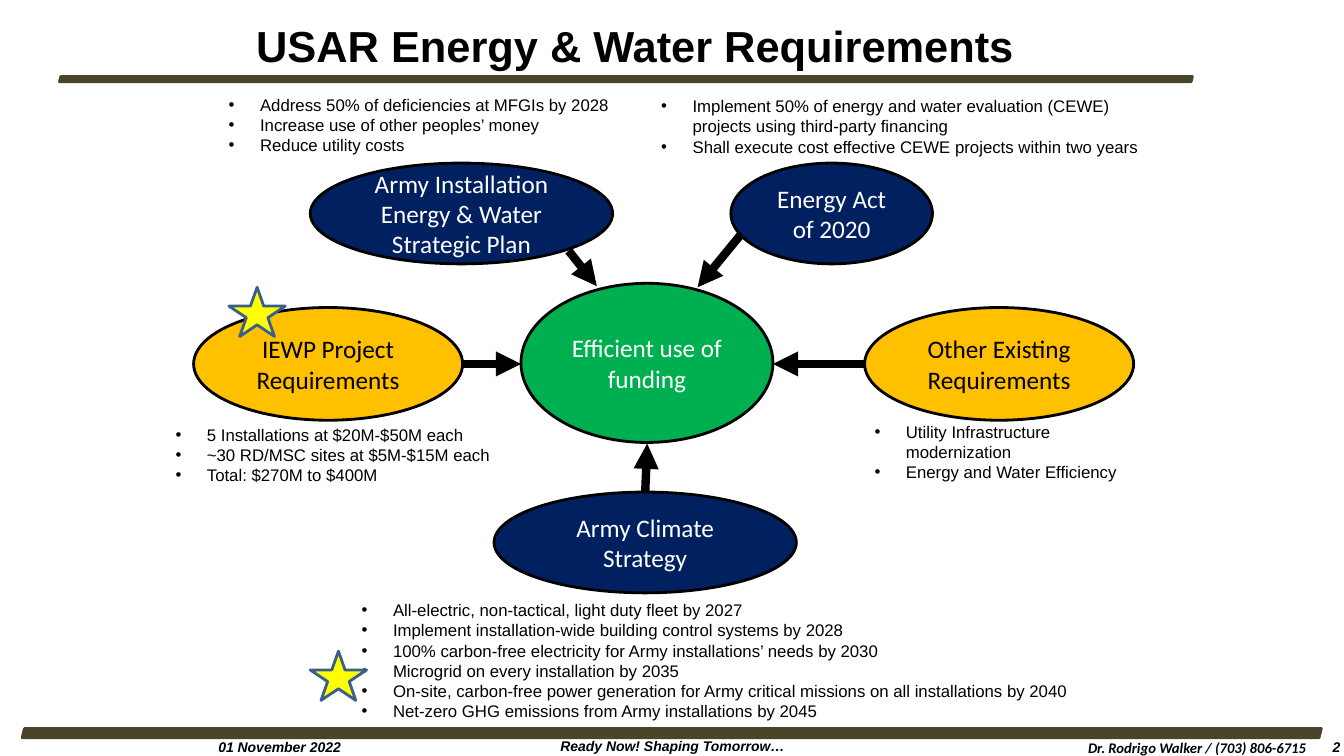
import dataclasses
import pptx
import pptx.util
import pptx.dml.color
import pptx.enum.shapes
import pptx.enum.text
import pptx.oxml
import pptx.oxml.ns

Cm = pptx.util.Cm
Pt = pptx.util.Pt
SHAPE = pptx.enum.shapes.MSO_SHAPE
ALIGN = pptx.enum.text.PP_ALIGN
ANCHOR = pptx.enum.text.MSO_ANCHOR


@dataclasses.dataclass(frozen=True)
class Theme:
    black: str = "000000"
    white: str = "FFFFFF"
    olive: str = "4A452A"
    navy: str = "002060"
    green: str = "00B050"
    gold: str = "FFC000"
    yellow: str = "FFFF00"
    blue: str = "3A5F8C"
    heading: str = "Arial"
    body: str = "Calibri"
    title_size: float = 31
    oval_size: float = 18
    list_size: float = 12
    contact_size: float = 10.5
    footer_size: float = 10
    outline: float = 2
    arrow: float = 6


theme = Theme()
rgb = pptx.dml.color.RGBColor.from_string


def add_figure(kind, box, fill, line):
    sp = s.shapes.add_shape(kind, *map(Cm, box))
    sp.shadow.inherit = False
    sp.fill.solid()
    sp.fill.fore_color.rgb = rgb(fill)
    sp.line.color.rgb = rgb(line)
    sp.line.width = Pt(theme.outline)
    return sp


def write(sp, lines, size, font, color=theme.black, align=ALIGN.CENTER,
          anchor=ANCHOR.TOP, wrap=True, bold=False, italic=False, bullet=False):
    tf = sp.text_frame
    tf.auto_size = pptx.enum.text.MSO_AUTO_SIZE.NONE
    tf.word_wrap = wrap
    tf.vertical_anchor = anchor
    for i, line in enumerate(lines):
        p = tf.add_paragraph() if i else tf.paragraphs[0]
        if bullet:
            pPr = p._p.get_or_add_pPr()
            pPr.set("marL", str(Cm(0.79)))
            pPr.set("indent", str(-Cm(0.79)))
            ns = pptx.oxml.ns.nsdecls("a")
            pPr.append(pptx.oxml.parse_xml(f'<a:buFont {ns} typeface="Arial"/>'))
            pPr.append(pptx.oxml.parse_xml(f'<a:buChar {ns} char="•"/>'))
        p.alignment = align
        p.space_before = Pt(0)
        r = p.add_run()
        r.text = line
        r.font.size = Pt(size)
        r.font.name = font
        r.font.bold = bold
        r.font.italic = italic
        r.font.color.rgb = rgb(color)


prs = pptx.Presentation()
prs.slide_width = Cm(33.87)
prs.slide_height = Cm(19.05)
s = prs.slides.add_slide(prs.slide_layouts[4])

for box in [(1.5, 1.93, 28.55, 0.13), (0.56, 18.36, 32.74, 0.23)]:
    add_figure(SHAPE.PARALLELOGRAM, box, theme.olive, theme.olive)

footers = [
    ("Ready Now! Shaping Tomorrow…", (13.82, 18.47, 6.25, 0.69),
     ALIGN.CENTER, False, theme.footer_size, theme.heading),
    ("2", (32.61, 18.49, 1.42, 0.71),
     ALIGN.RIGHT, True, theme.footer_size, theme.heading),
    ("01 November 2022", (5.23, 18.49, 3.63, 0.69),
     ALIGN.CENTER, False, theme.footer_size, theme.heading),
    ("Dr. Rodrigo Walker / (703) 806-6715", (21.03, 18.49, 12.14, 0.71),
     ALIGN.RIGHT, True, theme.contact_size, theme.body),
]
for text, box, align, wrap, size, font in footers:
    sp = s.shapes.add_textbox(*map(Cm, box))
    write(sp, [text], size, font, align=align, wrap=wrap, bold=True, italic=True)

title = s.shapes.title
title.left, title.top, title.width, title.height = map(Cm, (4.88, 0.3, 22.23, 1.68))
write(title, ["USAR Energy & Water Requirements"], theme.title_size,
      theme.heading, anchor=ANCHOR.MIDDLE, bold=True)

arrows = [
    (18.85, 5.69, 17.58, 7.24),
    (14.33, 6.32, 15.04, 7.21),
    (11.63, 9.17, 13.13, 9.17),
    (21.79, 9.17, 19.48, 9.17),
    (16.26, 12.4, 16.31, 11.18),
]
for ends in arrows:
    cx = s.shapes.add_connector(pptx.enum.shapes.MSO_CONNECTOR.STRAIGHT, *map(Cm, ends))
    cx.line.color.rgb = rgb(theme.black)
    cx.line.width = Pt(theme.arrow)
    ns = pptx.oxml.ns.nsdecls("a")
    cx.line._get_or_add_ln().append(pptx.oxml.parse_xml(f'<a:tailEnd {ns} type="triangle"/>'))
    cx._element.spPr.append(pptx.oxml.parse_xml(f'<a:effectLst {ns}/>'))

ovals = [
    ("Energy Act of 2020", (18.42, 4.11, 5.08, 2.54), theme.navy, theme.white),
    ("Army Installation Energy & Water Strategic Plan", (7.82, 4.11, 7.62, 2.54),
     theme.navy, theme.white),
    ("Army Climate Strategy", (12.45, 12.4, 7.62, 2.54), theme.navy, theme.white),
    ("Efficient use of funding", (13.13, 7.14, 6.35, 4.01), theme.green, theme.white),
    ("IEWP Project Requirements", (4.88, 7.75, 6.78, 2.84), theme.gold, theme.black),
    ("Other Existing Requirements", (21.79, 7.75, 6.78, 2.84), theme.gold, theme.black),
]
for text, box, fill, color in ovals:
    sp = add_figure(SHAPE.OVAL, box, fill, theme.black)
    write(sp, [text], theme.oval_size, theme.body, color, anchor=ANCHOR.MIDDLE)

lists = [
    ((5.51, 2.26, 10.19, 1.8), False, [
        "Address 50% of deficiencies at MFGIs by 2028",
        "Increase use of other peoples’ money",
        "Reduce utility costs"]),
    ((8.86, 14.99, 19.1, 3.33), True, [
        "All-electric, non-tactical, light duty fleet by 2027",
        "Implement installation-wide building control systems by 2028",
        "100% carbon-free electricity for Army installations’ needs by 2030",
        "Microgrid on every installation by 2035",
        "On-site, carbon-free power generation for Army critical missions "
        "on all installations by 2040",
        "Net-zero GHG emissions from Army installations by 2045"]),
    ((16.41, 2.29, 13.34, 1.8), True, [
        "Implement 50% of energy and water evaluation (CEWE) projects "
        "using third-party financing",
        "Shall execute cost effective CEWE projects within two years"]),
    ((4.17, 10.57, 8.51, 1.8), False, [
        "5 Installations at $20M-$50M each",
        "~30 RD/MSC sites at $5M-$15M each",
        "Total: $270M to $400M"]),
    ((21.79, 10.49, 6.78, 1.8), True, [
        "Utility Infrastructure modernization",
        "Energy and Water Efficiency"]),
]
bodies = [sp for sp in s.placeholders if sp.placeholder_format.idx]
bodies.append(s.shapes.add_textbox(0, 0, Cm(1), Cm(1)))
for sp, (box, wrap, lines) in zip(bodies, lists):
    sp.left, sp.top, sp.width, sp.height = map(Cm, box)
    write(sp, lines, theme.list_size, theme.heading, align=ALIGN.LEFT,
          wrap=wrap, bullet=True)

for left, top in [(5.77, 7.24), (7.82, 16.41)]:
    add_figure(SHAPE.STAR_5_POINT, (left, top, 1.42, 1.24), theme.yellow, theme.blue)

prs.save("out.pptx")
